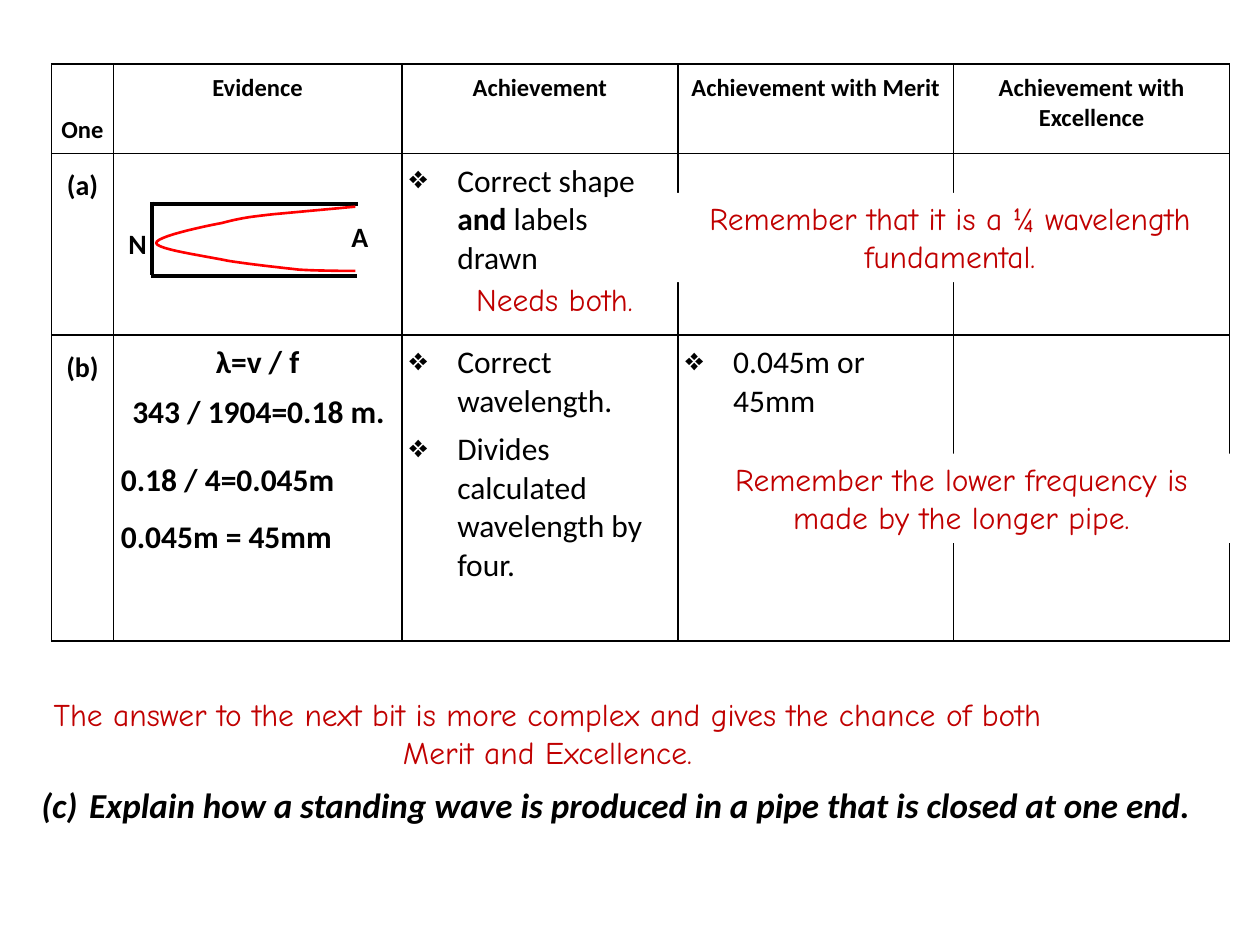
from lxml.etree import SubElement
from pptx import Presentation
from pptx.dml.color import RGBColor
from pptx.enum.shapes import MSO_CONNECTOR, MSO_SHAPE
from pptx.enum.text import MSO_ANCHOR, MSO_AUTO_SIZE, PP_ALIGN
from pptx.oxml import parse_xml
from pptx.oxml.ns import nsdecls, qn
from pptx.util import Inches, Pt

COLORS = {"ink": "000000", "paper": "FFFFFF", "note": "C00000", "wave": "FF0000"}
CENTER, LEFT = PP_ALIGN.CENTER, PP_ALIGN.LEFT


def color(name):
    return RGBColor.from_string(COLORS[name])


def write(paragraph, text, size, bold=False, align=LEFT, bullet=None, ink="ink", face="Calibri"):
    """Fill and format a paragraph; bullet is the XML element of a hanging list marker."""
    paragraph.text = text
    paragraph.alignment = align
    font = paragraph.font
    font.name, font.size, font.bold = face, Pt(size), bold
    font.color.rgb = color(ink)
    if bullet:
        properties = paragraph._p.get_or_add_pPr()
        properties.set("marL", str(Inches(0.38)))
        properties.set("indent", str(-Inches(0.38)))
        properties.find(qn("a:defRPr")).addprevious(parse_xml(bullet))


presentation = Presentation()
presentation.slide_width, presentation.slide_height = Inches(10), Inches(7.5)
slide = presentation.slides.add_slide(presentation.slide_layouts[6])

# Marking schedule: each cell lists (text, size, bold, align, bullet)
DIAMOND = f'<a:buChar {nsdecls("a")} char="❖"/>'
COLUMN_WIDTHS = [0.49, 2.29, 2.19, 2.19, 2.19]
ROW_HEIGHTS = [0.7, 1.44, 2.43]
headings = ["Evidence", "Achievement", "Achievement with Merit", "Achievement with Excellence"]
schedule = [
    [[("\vOne", 14, True, CENTER)]] + [[(heading, 14, True, CENTER)] for heading in headings],
    [[("(a)", 16, True, CENTER)], [], [("Correct shape ", 18, False, LEFT, DIAMOND)], [], []],
    [
        [("(b)", 16, True, CENTER)],
        [("λ=v / f", 18, True, CENTER), ("343 / 1904=0.18 m.", 18, True),
         ("0.18 / 4=0.045m", 18, True), ("0.045m = 45mm", 18, True)],
        [("Correct wavelength.", 18, False, LEFT, DIAMOND),
         ("Divides calculated wavelength by four.", 18, False, LEFT, DIAMOND)],
        [("0.045m or 45mm", 18, False, LEFT, DIAMOND)],
        [],
    ],
]
table = slide.shapes.add_table(
    len(ROW_HEIGHTS), len(COLUMN_WIDTHS), Inches(0.41), Inches(0.51),
    Inches(sum(COLUMN_WIDTHS)), Inches(sum(ROW_HEIGHTS))).table
table.first_row = table.horz_banding = False
for column, width in zip(table.columns, COLUMN_WIDTHS):
    column.width = Inches(width)
for row, height, contents in zip(table.rows, ROW_HEIGHTS, schedule):
    row.height = Inches(height)
    for index, (cell, paragraphs) in enumerate(zip(row.cells, contents)):
        cell.margin_left = cell.margin_right = Inches(0.06)
        cell.margin_top = cell.margin_bottom = Inches(0.07)
        for position, side in enumerate(("lnL", "lnR", "lnT", "lnB")):
            cell._tc.get_or_add_tcPr().insert(position, parse_xml(
                f'<a:{side} {nsdecls("a")} w="{Pt(1)}"><a:solidFill>'
                f'<a:srgbClr val="{COLORS["ink"]}"/></a:solidFill></a:{side}>'))
        cell.fill.solid()
        cell.fill.fore_color.rgb = color("paper")
        for number, content in enumerate(paragraphs):
            frame = cell.text_frame
            paragraph = frame.add_paragraph() if number else frame.paragraphs[0]
            paragraph.space_before = paragraph.space_after = Pt(3)
            if index == 0 or number > 1 and index == 1:
                paragraph.line_spacing = 1.2
            write(paragraph, *content)

shape_criterion = table.cell(1, 2).text_frame.paragraphs[0]
for text, bold in (("and", True), (" labels drawn", False)):
    run = shape_criterion.add_run()
    run.text, run.font.bold = text, bold

wavelength_working = table.cell(2, 1).text_frame.paragraphs[1]
wavelength_working._p.get_or_add_pPr().set("marL", str(Inches(0.09)))
wavelength_working.line_spacing = 1.15
wavelength_working.space_before, wavelength_working.space_after = Pt(0), Pt(10)

# Closed pipe with its fundamental standing wave
pipe = slide.shapes.add_group_shape()
for x1, y1, x2, y2 in ((1.2, 1.62, 2.84, 1.62), (1.2, 2.19, 2.83, 2.19), (1.21, 1.6, 1.21, 2.18)):
    wall = pipe.shapes.add_connector(
        MSO_CONNECTOR.STRAIGHT, Inches(x1), Inches(y1), Inches(x2), Inches(y2))
    wall.line.color.rgb = color("ink")
    wall.line.width = Pt(2.25)
    SubElement(wall._element.spPr, qn("a:effectLst"))

curves = [
    ((2.17, 1.7), (1.99, 1.72), (1.91, 1.73), (1.76, 1.77)),
    ((1.76, 1.77), (1.6, 1.8), (1.23, 1.88), (1.24, 1.93)),
    ((1.24, 1.93), (1.25, 1.98), (1.62, 2.03), (1.81, 2.07)),
    ((1.81, 2.07), (2, 2.1), (2.2, 2.12), (2.37, 2.14)),
    ((2.37, 2.14), (2.54, 2.15), (2.75, 2.15), (2.82, 2.15)),
]
STEPS = 12
wave_points = [curves[0][0]]
for curve in curves:
    for step in range(1, STEPS + 1):
        t = step / STEPS
        weights = ((1 - t) ** 3, 3 * t * (1 - t) ** 2, 3 * t * t * (1 - t), t ** 3)
        wave_points.append([sum(w * point[axis] for w, point in zip(weights, curve))
                            for axis in (0, 1)])
builder = pipe.shapes.build_freeform(Inches(2.82), Inches(1.64))
builder.add_line_segments([(Inches(x), Inches(y)) for x, y in wave_points], close=False)
wave = builder.convert_to_shape()
wave.fill.background()
wave.line.color.rgb = color("wave")
wave.line.width = Pt(1.5)
wave.shadow.inherit = False

for label, left, top in (("N", 0.92, 1.75), ("A", 2.69, 1.69)):
    box = pipe.shapes.add_textbox(Inches(left), Inches(top), Inches(0.35), Inches(0.37))
    box.text_frame.word_wrap = False
    box.text_frame.auto_size = MSO_AUTO_SIZE.SHAPE_TO_FIT_TEXT
    write(box.text_frame.paragraphs[0], label, 16, True)

# Teacher's notes
notes = [
    ("Remember that it is a ¼ wavelength fundamental.", 5.33, 1.53, 4.42, 0.71),
    ("Remember the lower frequency is made by the longer pipe.", 5.42, 3.6, 4.42, 0.71),
    ("Needs both.", 3.51, 2.17, 1.78, 0.4),
    ("The answer to the next bit is more complex and gives the chance of both "
     "Merit and Excellence.", 0.3, 5.47, 8.09, 0.71),
]
for text, *bounds in notes:
    note = slide.shapes.add_shape(MSO_SHAPE.RECTANGLE, *map(Inches, bounds))
    note.shadow.inherit = False
    note.fill.solid()
    note.fill.fore_color.rgb = color("paper")
    note.line.fill.background()
    frame = note.text_frame
    frame.word_wrap = True
    frame.vertical_anchor = MSO_ANCHOR.TOP
    frame.auto_size = MSO_AUTO_SIZE.SHAPE_TO_FIT_TEXT
    write(frame.paragraphs[0], text, 18, align=CENTER, ink="note", face="Comic Neue")

# Next question
question = slide.shapes.add_textbox(Inches(0.23), Inches(6.17), Inches(9.67), Inches(0.44))
question.text_frame.word_wrap = True
question.text_frame.auto_size = MSO_AUTO_SIZE.SHAPE_TO_FIT_TEXT
paragraph = question.text_frame.paragraphs[0]
write(paragraph, "Explain how a standing wave is produced in a pipe that is closed at one end.",
      20, True, bullet=f'<a:buAutoNum {nsdecls("a")} type="alphaLcParenBoth" startAt="3"/>')
paragraph.font.italic = True

presentation.save("out.pptx")
